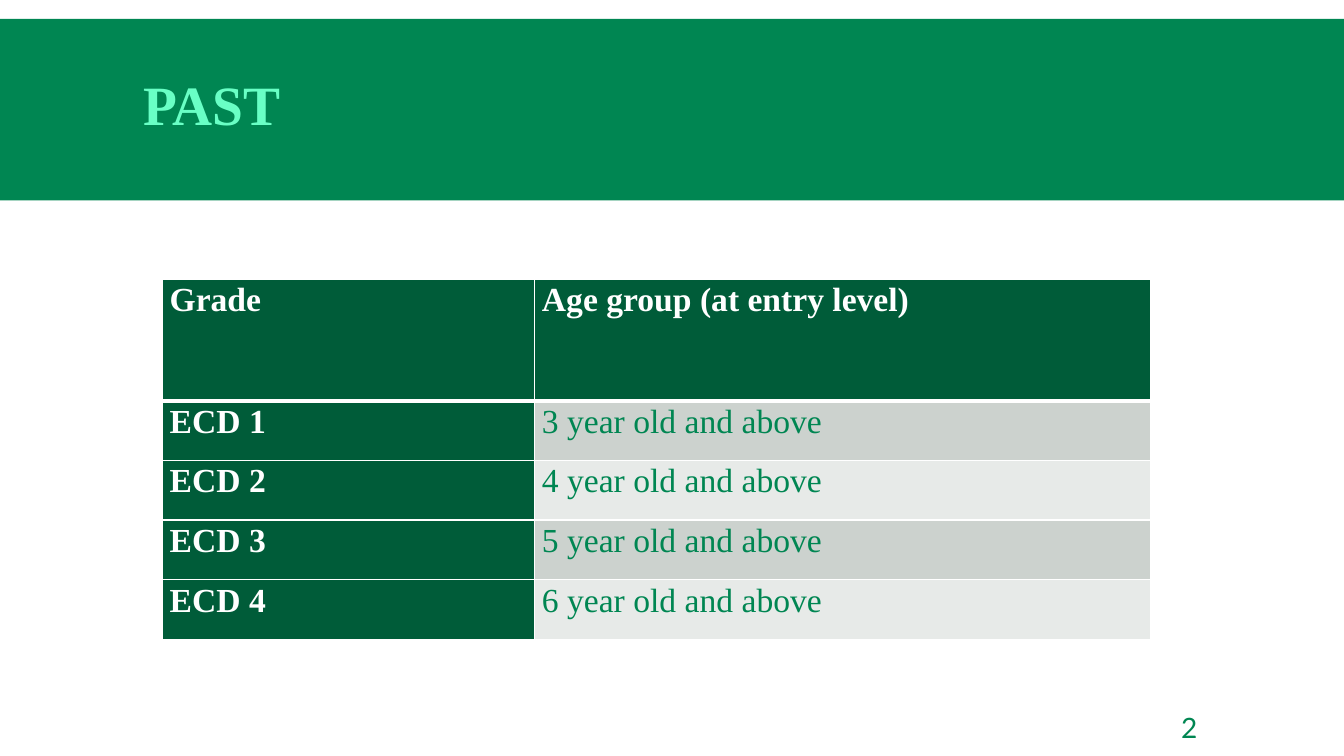
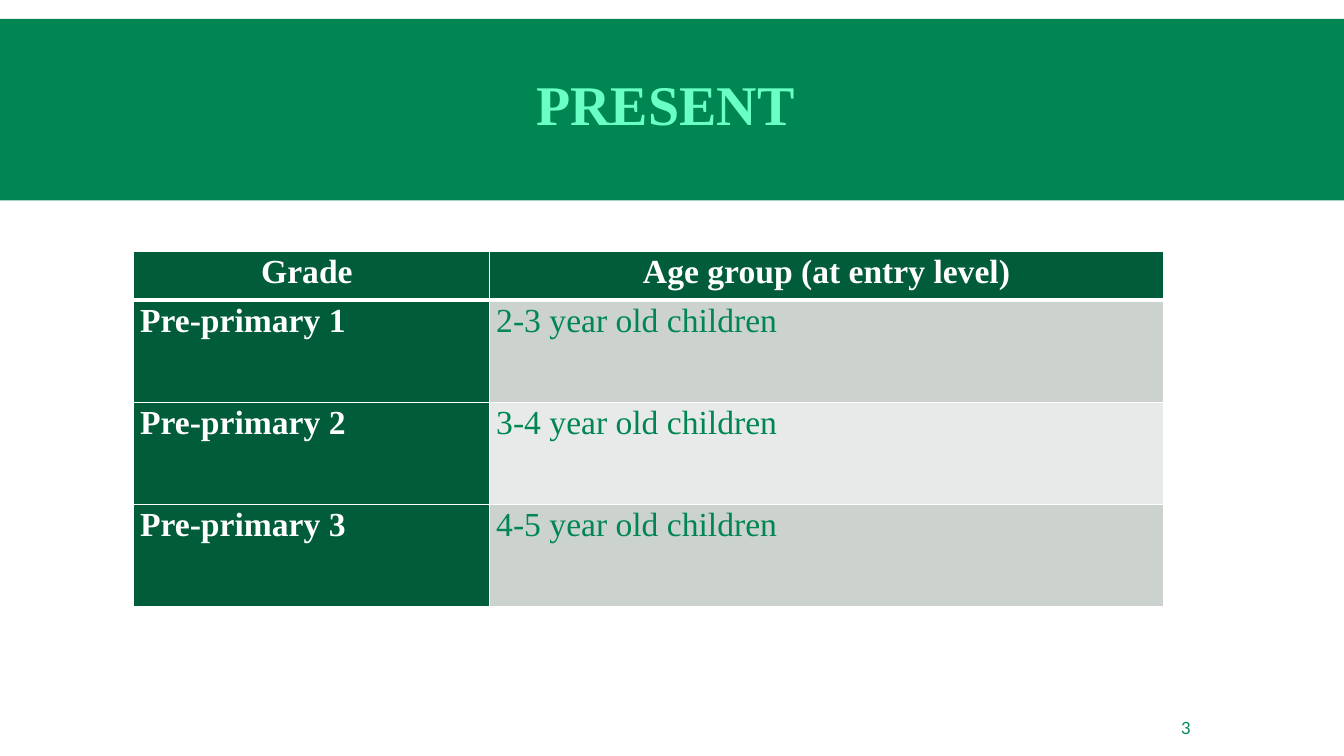
from lxml.etree import SubElement
from pptx import Presentation
from pptx.dml.color import RGBColor
from pptx.enum.shapes import MSO_SHAPE
from pptx.enum.text import MSO_ANCHOR, PP_ALIGN
from pptx.oxml.ns import qn
from pptx.util import Inches, Pt

WIDTH, HEIGHT = Inches(13.33), Inches(7.5)
SERIF, SANS = "Times New Roman", "Lato"
COLORS = {
    "band": "008652",
    "title": "69FFC5",
    "heading": "005C39",
    "odd_row": "CCD2CE",
    "even_row": "E7EAE8",
    "white": "FFFFFF",
}

# Table lengths are percentages of the slide: left and columns of its width,
# top and rows of its height.
TOPICS = [
    {
        "title": "PAST", "title_size": 39.6, "align": PP_ALIGN.LEFT,
        "page": "2", "page_size": 20,
        "left": 12.1, "top": 36.9, "columns": [27.7, 45.8],
        "heading_row": 16.1, "body_row": 7.9,
        "rows": [
            ("Grade", "Age group (at entry level)"),
            ("ECD 1", "3 year old and above"),
            ("ECD 2", "4 year old and above"),
            ("ECD 3", "5 year old and above"),
            ("ECD 4", "6 year old and above"),
        ],
    },
    {
        "title": "PRESENT ", "title_size": 40, "align": PP_ALIGN.CENTER,
        "page": "3", "page_size": 12,
        "left": 9.9, "top": 33.2, "columns": [26.5, 50.2],
        "heading_row": 6.5, "body_row": 13.5,
        "rows": [
            ("Grade ", "Age group (at entry level)"),
            ("Pre-primary 1", "2-3 year old children"),
            ("Pre-primary 2", "3-4 year old children"),
            ("Pre-primary 3", "4-5 year old children"),
        ],
    },
]


def box(left, top, width, height):
    """Turn percentages of the slide into left, top, width and height."""
    return [int(side * share / 100) for side, share in
            zip((WIDTH, HEIGHT, WIDTH, HEIGHT), (left, top, width, height))]


def write(frame, text, size, color, font=SERIF, bold=False, align=PP_ALIGN.LEFT, spacing=1.0):
    frame.text = text
    paragraph = frame.paragraphs[0]
    paragraph.alignment = align
    paragraph.line_spacing = spacing
    style = paragraph.runs[0].font
    style.name, style.size, style.bold = font, Pt(size), bold
    style.color.rgb = RGBColor.from_string(COLORS[color])


prs = Presentation()
prs.slide_width, prs.slide_height = WIDTH, HEIGHT
layout = prs.slide_layouts[5]
slides = [prs.slides.add_slide(layout) for _ in TOPICS]

# The band is drawn once and moved to the layout, behind everything.
band = slides[0].shapes.add_shape(MSO_SHAPE.RECTANGLE, *box(0, 2.5, 100, 24))
band.shadow.inherit = False
band.fill.solid()
band.fill.fore_color.rgb = RGBColor.from_string(COLORS["band"])
band.line.fill.background()
band._element.nvSpPr.cNvPr.set("id", "20")
layout.shapes._spTree.insert(2, band._element)

for slide, topic in zip(slides, TOPICS):
    title = slide.shapes.title
    title.left, title.top, title.width, title.height = box(9.9, 4.2, 80.2, 22)
    title.text_frame.vertical_anchor = MSO_ANCHOR.MIDDLE
    title.text_frame.margin_bottom = Inches(0.18)
    write(title.text_frame, topic["title"], topic["title_size"], "title",
          bold=True, align=topic["align"], spacing=0.85)

    page = slide.shapes.add_textbox(*box(87.5, 93.6, 7.7, 5.3)).text_frame
    page.word_wrap = True
    page.vertical_anchor = MSO_ANCHOR.MIDDLE
    page.margin_left = page.margin_top = page.margin_bottom = Inches(0.05)
    write(page, topic["page"], topic["page_size"], "band", font=SANS)

    rows, columns = topic["rows"], topic["columns"]
    heights = [topic["heading_row"]] + [topic["body_row"]] * (len(rows) - 1)
    grades = slide.shapes.add_table(
        len(rows), len(columns),
        *box(topic["left"], topic["top"], sum(columns), sum(heights))).table
    grades.horz_banding = False
    for column, share in zip(grades.columns, columns):
        column.width = int(WIDTH * share / 100)

    for r, texts in enumerate(rows):
        grades.rows[r].height = int(HEIGHT * heights[r] / 100)
        for c, text in enumerate(texts):
            cell = grades.cell(r, c)
            cell.margin_left = cell.margin_right = Inches(0.07)
            cell.margin_top = cell.margin_bottom = 0

            heading = r == 0 or c == 0
            write(cell.text_frame, text, 24, "white" if heading else "band", bold=heading,
                  align=topic["align"] if r == 0 else PP_ALIGN.LEFT, spacing=1.07)

            for edge in ("lnL", "lnR", "lnT", "lnB"):
                under_heading = (r, edge) in ((0, "lnB"), (1, "lnT"))
                border = SubElement(cell._tc.get_or_add_tcPr(), qn(f"a:{edge}"),
                                    w=str(Pt(3 if under_heading else 1)))
                SubElement(SubElement(border, qn("a:solidFill")), qn("a:srgbClr"),
                           val=COLORS["white"])

            fill = "heading" if heading else "odd_row" if r % 2 else "even_row"
            cell.fill.solid()
            cell.fill.fore_color.rgb = RGBColor.from_string(COLORS[fill])

prs.save("out.pptx")
